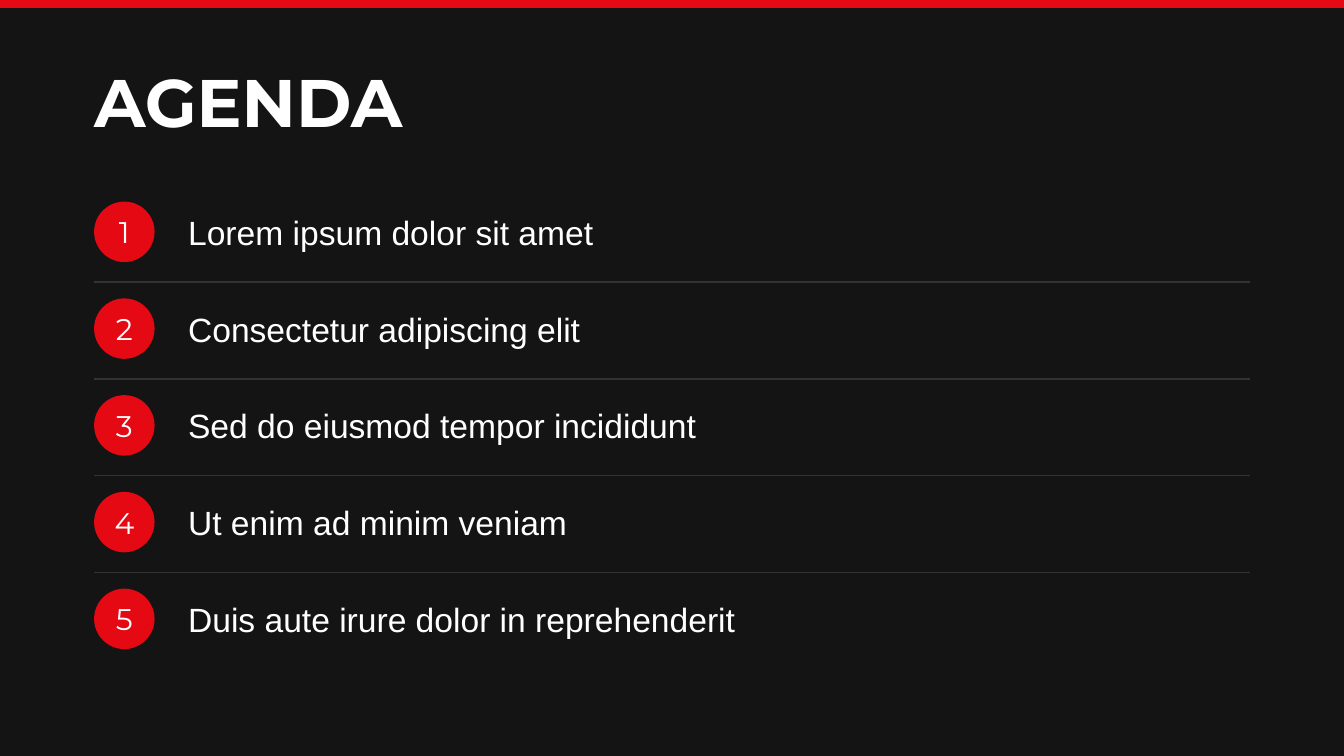
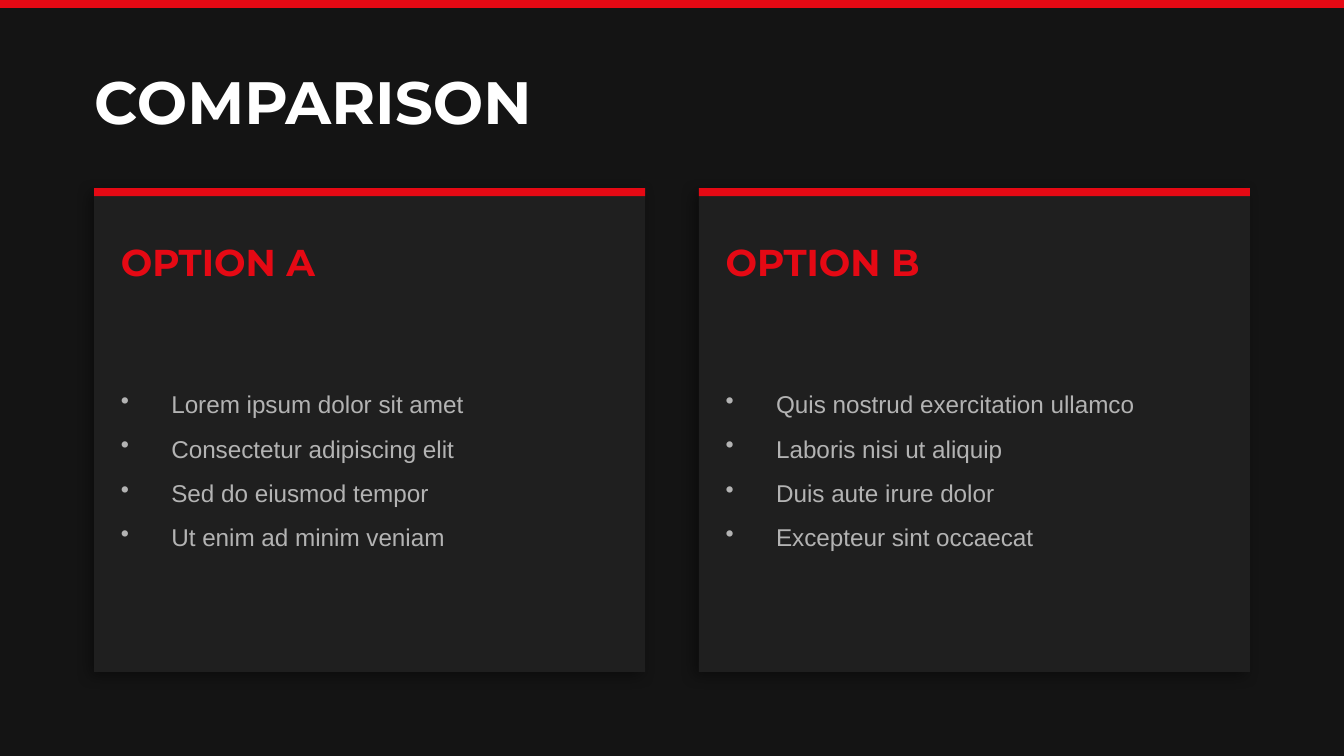
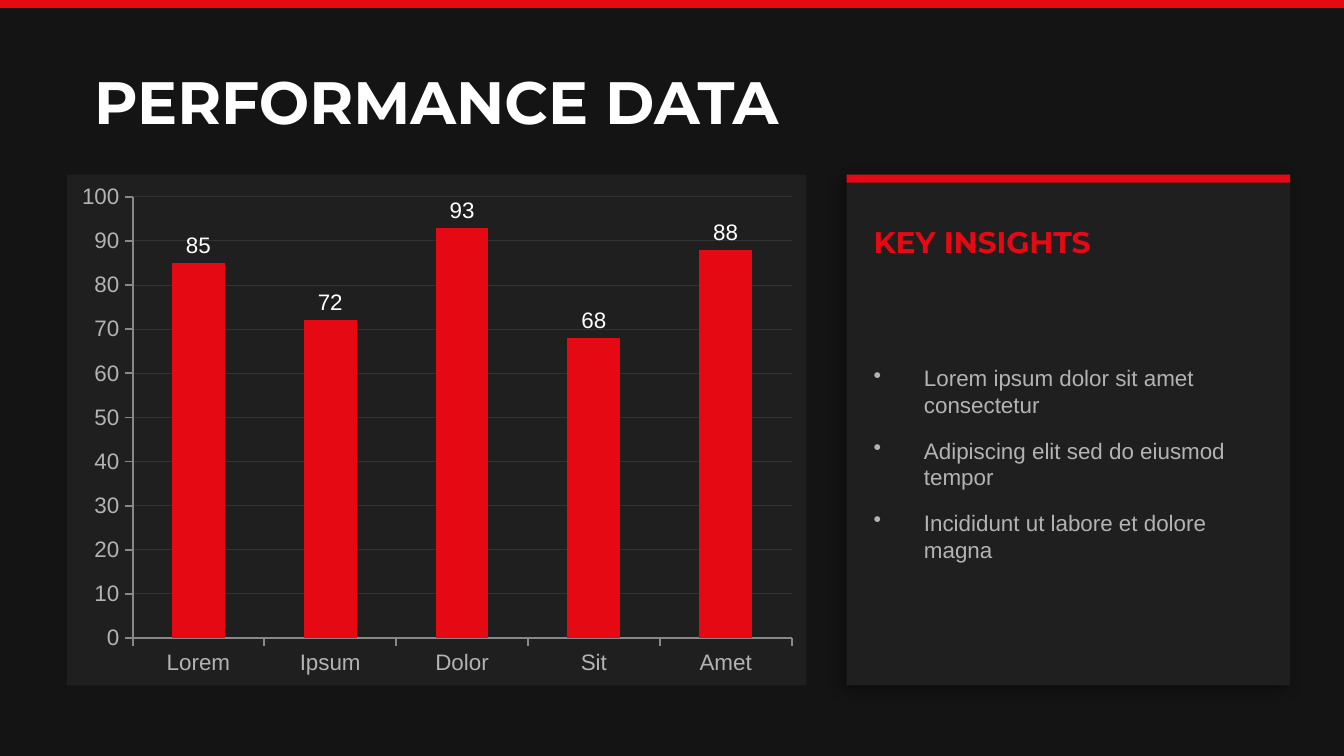
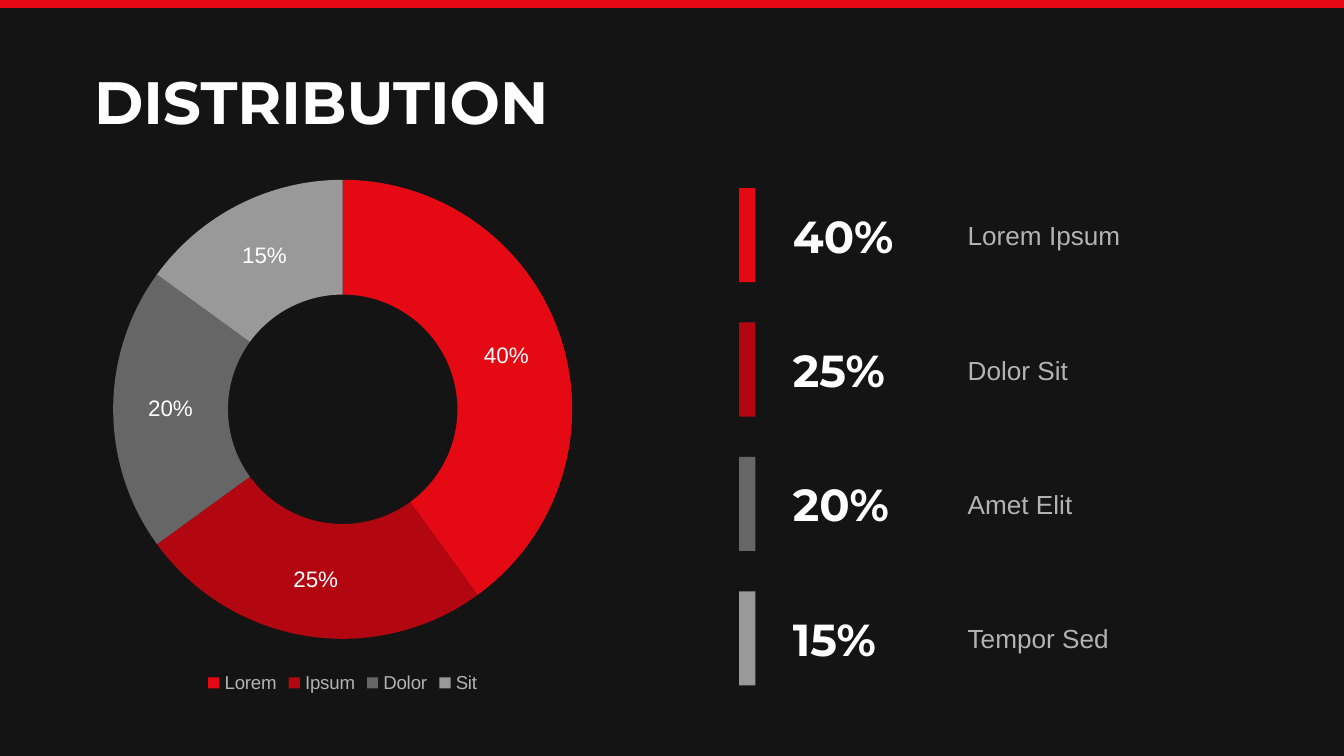
from dataclasses import dataclass

from lxml.etree import SubElement
from pptx import Presentation
from pptx.chart.chart import Chart
from pptx.chart.data import CategoryChartData
from pptx.dml.color import RGBColor
from pptx.enum.chart import XL_CHART_TYPE, XL_LABEL_POSITION, XL_LEGEND_POSITION, XL_TICK_MARK
from pptx.enum.shapes import MSO_CONNECTOR, MSO_SHAPE
from pptx.enum.text import MSO_ANCHOR, PP_ALIGN
from pptx.oxml import parse_xml
from pptx.oxml.ns import nsdecls, qn
from pptx.presentation import Presentation as Deck
from pptx.shapes.autoshape import Shape
from pptx.slide import Slide
from pptx.text.text import Font, TextFrame
from pptx.util import Inches, Pt

HEADING_FONT = "Montserrat"
BODY_FONT = "Arial"

BACKGROUND = "141414"
PANEL = "1F1F1F"
RED = "E50914"
DARK_RED = "B20710"
DARK_GRAY = "666666"
LIGHT_GRAY = "999999"
WHITE = "FFFFFF"
MUTED = "B3B3B3"
RULE = "333333"
AXIS = "888888"
SLICE_EDGE = "F9F9F9"

SLIDE_WIDTH = 10
MARGIN = 0.7
CONTENT_WIDTH = 8.6
BAND_HEIGHT = 0.06
BULLET_INDENT = Inches(3 / 8)


@dataclass(frozen=True)
class Box:
    """A rectangle in inches."""
    left: float
    top: float
    width: float
    height: float

    def lengths(self) -> tuple[int, int, int, int]:
        return Inches(self.left), Inches(self.top), Inches(self.width), Inches(self.height)


@dataclass(frozen=True)
class TextStyle:
    size: float
    color: str = WHITE
    font: str = BODY_FONT
    bold: bool = False


@dataclass(frozen=True)
class Card:
    """A panel with a red top band, a heading and bullets."""
    box: Box
    heading: str
    heading_size: float
    heading_height: float
    bullets: list[str]
    bullet_size: float
    bullet_gap: float
    bullets_height: float


@dataclass(frozen=True)
class Share:
    category: str
    percent: int
    description: str
    color: str


AGENDA = [
    "Lorem ipsum dolor sit amet",
    "Consectetur adipiscing elit",
    "Sed do eiusmod tempor incididunt",
    "Ut enim ad minim veniam",
    "Duis aute irure dolor in reprehenderit",
]

OPTIONS = {
    "OPTION A": [
        "Lorem ipsum dolor sit amet",
        "Consectetur adipiscing elit",
        "Sed do eiusmod tempor",
        "Ut enim ad minim veniam",
    ],
    "OPTION B": [
        "Quis nostrud exercitation ullamco",
        "Laboris nisi ut aliquip",
        "Duis aute irure dolor",
        "Excepteur sint occaecat",
    ],
}

PERFORMANCE = {"Lorem": 85, "Ipsum": 72, "Dolor": 93, "Sit": 68, "Amet": 88}

INSIGHTS = [
    "Lorem ipsum dolor sit amet consectetur",
    "Adipiscing elit sed do eiusmod tempor",
    "Incididunt ut labore et dolore magna",
]

SHARES = [
    Share("Lorem", 40, "Lorem Ipsum", RED),
    Share("Ipsum", 25, "Dolor Sit", DARK_RED),
    Share("Dolor", 20, "Amet Elit", DARK_GRAY),
    Share("Sit", 15, "Tempor Sed", LIGHT_GRAY),
]


def rgb(color: str) -> RGBColor:
    return RGBColor.from_string(color)


def style_font(font: Font, style: TextStyle) -> None:
    font.size = Pt(style.size)
    font.name = style.font
    font.bold = style.bold
    font.color.rgb = rgb(style.color)


def add_block(slide: Slide, box: Box, color: str,
              preset: MSO_SHAPE = MSO_SHAPE.RECTANGLE) -> Shape:
    block = slide.shapes.add_shape(preset, *box.lengths())
    block.shadow.inherit = False
    block.fill.solid()
    block.fill.fore_color.rgb = rgb(color)
    block.line.fill.background()
    return block


def add_text(slide: Slide, box: Box, lines: list[str], style: TextStyle,
             align: PP_ALIGN = PP_ALIGN.LEFT) -> TextFrame:
    """Add a wrapped, vertically centred text box without insets."""
    frame = slide.shapes.add_textbox(*box.lengths()).text_frame
    frame.word_wrap = True
    frame.vertical_anchor = MSO_ANCHOR.MIDDLE
    frame.margin_left = frame.margin_top = frame.margin_right = frame.margin_bottom = 0
    frame.text = "\n".join(lines)
    for paragraph in frame.paragraphs:
        paragraph.alignment = align
        for run in paragraph.runs:
            style_font(run.font, style)
    return frame


def add_bullets(slide: Slide, box: Box, lines: list[str], style: TextStyle, gap: float) -> None:
    frame = add_text(slide, box, lines, style)
    for index, paragraph in enumerate(frame.paragraphs):
        if index:
            paragraph.space_before = Pt(gap)
        properties = paragraph._p.get_or_add_pPr()
        properties.set("marL", str(BULLET_INDENT))
        properties.set("indent", str(-BULLET_INDENT))
        bullet_color = SubElement(properties, qn("a:buClr"))
        SubElement(bullet_color, qn("a:srgbClr"), val=style.color)
        SubElement(properties, qn("a:buSzPct"), val="100000")
        SubElement(properties, qn("a:buChar"), char="•")


def add_rule(slide: Slide, top: float) -> None:
    rule = slide.shapes.add_connector(
        MSO_CONNECTOR.STRAIGHT, Inches(MARGIN), Inches(top),
        Inches(MARGIN + CONTENT_WIDTH), Inches(top))
    rule.line.color.rgb = rgb(RULE)
    rule.line.width = Pt(0.75)
    SubElement(rule._element.spPr, qn("a:effectLst"))


def cast_shadow(shape: Shape) -> None:
    effects = shape._element.spPr.find(qn("a:effectLst"))
    effects.append(parse_xml(
        f'<a:outerShdw {nsdecls("a")} blurRad="{Pt(8)}" dist="{Pt(3)}" dir="{135 * 60000}" '
        'algn="bl" rotWithShape="0">'
        '<a:srgbClr val="000000"><a:alpha val="40000"/></a:srgbClr></a:outerShdw>'))


def add_card(slide: Slide, card: Card) -> None:
    box = card.box
    cast_shadow(add_block(slide, box, PANEL))
    add_block(slide, Box(box.left, box.top, box.width, BAND_HEIGHT), RED)
    left, width = box.left + 0.2, box.width - 0.4
    add_text(slide, Box(left, box.top + 0.3, width, card.heading_height), [card.heading],
             TextStyle(card.heading_size, RED, HEADING_FONT, bold=True))
    add_bullets(slide, Box(left, box.top + 0.9, width, card.bullets_height),
                card.bullets, TextStyle(card.bullet_size, MUTED), card.bullet_gap)


def add_titled_slide(deck: Deck, title: str, size: float = 32,
                     width: float = CONTENT_WIDTH) -> Slide:
    slide = deck.slides.add_slide(deck.slide_layouts[6])
    slide.background.fill.solid()
    slide.background.fill.fore_color.rgb = rgb(BACKGROUND)
    add_block(slide, Box(0, 0, SLIDE_WIDTH, BAND_HEIGHT), RED)
    add_text(slide, Box(MARGIN, 0.4, width, 0.7), [title],
             TextStyle(size, font=HEADING_FONT, bold=True))
    return slide


def add_series_chart(slide: Slide, kind: XL_CHART_TYPE, box: Box,
                     values: dict[str, int], fill: str) -> Chart:
    """Add an untitled chart of one series on a filled background."""
    data = CategoryChartData()
    data.categories = list(values)
    data.add_series("Series 1", list(values.values()))
    chart = slide.shapes.add_chart(kind, *box.lengths(), data).chart
    chart.has_title = False
    chart.has_legend = False
    style_font(chart.font, TextStyle(10, "000000"))
    chart.element.find(qn("c:chart")).addnext(parse_xml(
        f'<c:spPr {nsdecls("c", "a")}><a:solidFill><a:srgbClr val="{fill}"/></a:solidFill>'
        '<a:ln><a:noFill/></a:ln></c:spPr>'))
    return chart


def build_agenda(deck: Deck) -> None:
    slide = add_titled_slide(deck, "AGENDA", size=36)
    first_top, pitch, diameter = 1.5, 0.72, 0.45
    for index, topic in enumerate(AGENDA):
        top = first_top + index * pitch
        if index:
            add_rule(slide, top - 0.12)
        badge = Box(MARGIN, top, diameter, diameter)
        add_block(slide, badge, RED, MSO_SHAPE.OVAL)
        add_text(slide, badge, [str(index + 1)], TextStyle(16, font=HEADING_FONT),
                 PP_ALIGN.CENTER)
        add_text(slide, Box(1.4, top, 7.5, diameter), [topic], TextStyle(18))


def build_comparison(deck: Deck) -> None:
    slide = add_titled_slide(deck, "COMPARISON")
    width, gap = 4.1, 0.4
    for index, (option, points) in enumerate(OPTIONS.items()):
        add_card(slide, Card(
            box=Box(MARGIN + index * (width + gap), 1.4, width, 3.6),
            heading=option, heading_size=20, heading_height=0.5,
            bullets=points, bullet_size=13, bullet_gap=8, bullets_height=2.4))


def build_performance(deck: Deck) -> None:
    slide = add_titled_slide(deck, "PERFORMANCE DATA", width=5.5)
    chart = add_series_chart(slide, XL_CHART_TYPE.COLUMN_CLUSTERED,
                             Box(0.5, 1.3, 5.5, 3.8), PERFORMANCE, PANEL)
    for axis in (chart.category_axis, chart.value_axis):
        axis.major_tick_mark = XL_TICK_MARK.OUTSIDE
        axis.minor_tick_mark = XL_TICK_MARK.NONE
        axis.format.line.color.rgb = rgb(AXIS)
        axis.format.line.width = Pt(1)
        style_font(axis.tick_labels.font, TextStyle(12, MUTED))
    scale = chart.value_axis
    scale.minimum_scale, scale.maximum_scale, scale.major_unit = 0, 100, 10
    scale.has_major_gridlines = True
    scale.major_gridlines.format.line.color.rgb = rgb(RULE)
    scale.major_gridlines.format.line.width = Pt(0.5)

    plot = chart.plots[0]
    plot.gap_width = 150
    plot.vary_by_categories = False
    scores = plot.series[0]
    scores.format.fill.solid()
    scores.format.fill.fore_color.rgb = rgb(RED)
    labels = scores.data_labels
    labels.show_value = True
    labels.position = XL_LABEL_POSITION.OUTSIDE_END
    labels.number_format = "#,##0"
    labels.number_format_is_linked = False
    style_font(labels.font, TextStyle(12))

    add_card(slide, Card(
        box=Box(6.3, 1.3, 3.3, 3.8),
        heading="KEY INSIGHTS", heading_size=16, heading_height=0.4,
        bullets=INSIGHTS, bullet_size=12, bullet_gap=10, bullets_height=2.5))


def build_distribution(deck: Deck) -> None:
    slide = add_titled_slide(deck, "DISTRIBUTION")
    chart = add_series_chart(slide, XL_CHART_TYPE.DOUGHNUT, Box(0.3, 1.2, 4.5, 4),
                             {share.category: share.percent for share in SHARES}, BACKGROUND)
    chart.has_legend = True
    chart.legend.position = XL_LEGEND_POSITION.BOTTOM
    chart.legend.include_in_layout = False
    style_font(chart.legend.font, TextStyle(10, MUTED))

    plot = chart.plots[0]
    plot.has_data_labels = True
    labels = plot.data_labels
    labels.show_value = False
    labels.show_percentage = True
    labels.number_format = "0%"
    labels.number_format_is_linked = False
    style_font(labels.font, TextStyle(12))
    ring = plot.series[0]
    ring.format.line.color.rgb = rgb(SLICE_EDGE)
    ring.format.line.width = Pt(0.75)

    first_top, pitch, height = 1.4, 1, 0.7
    for index, share in enumerate(SHARES):
        slice_format = ring.points[index].format
        slice_format.fill.solid()
        slice_format.fill.fore_color.rgb = rgb(share.color)
        slice_format.line.fill.background()

        top = first_top + index * pitch
        add_block(slide, Box(5.5, top, 0.12, height), share.color)
        add_text(slide, Box(5.9, top, 1.2, height), [f"{share.percent}%"],
                 TextStyle(24, font=HEADING_FONT, bold=True))
        add_text(slide, Box(7.2, top, 2.5, height), [share.description], TextStyle(14, MUTED))


def main() -> None:
    deck = Presentation()
    deck.slide_width = Inches(SLIDE_WIDTH)
    deck.slide_height = Inches(SLIDE_WIDTH * 9 / 16)
    build_agenda(deck)
    build_comparison(deck)
    build_performance(deck)
    build_distribution(deck)
    deck.save("out.pptx")


if __name__ == "__main__":
    main()
